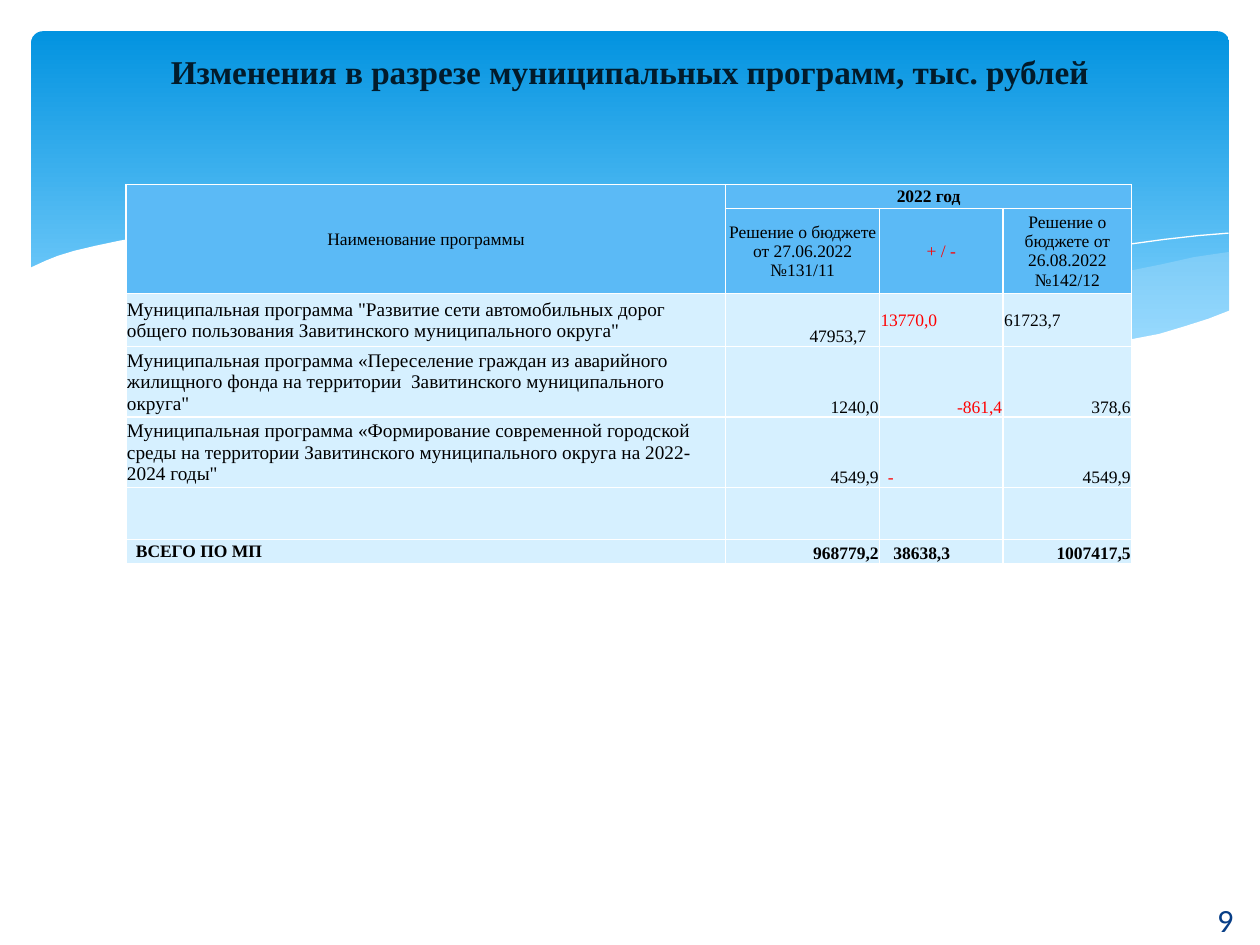
from lxml.etree import SubElement
from pptx import Presentation
from pptx.dml.color import RGBColor
from pptx.enum.shapes import MSO_SHAPE as Preset
from pptx.enum.text import MSO_ANCHOR as Anchor, PP_ALIGN as Align
from pptx.oxml.ns import qn
from pptx.util import Cm, Pt

SERIF = "Times New Roman"
WHITE, BLACK, RED = "FFFFFF", "000000", "FF0000"
HEAD_FILL, BODY_FILL, WAVE_FILL = "5BBAF6", "D6F0FF", "C6E7FC"
WAVE_UNIT = Cm(0.0254)  # wave points are in hundredths of an inch

RIGHT_WAVE = [
    (975, 200), (948, 204), (921, 210), (891, 216), (861, 223), (805, 237), (753, 248),
    (706, 257), (661, 265), (691, 269), (719, 271), (745, 275), (769, 277), (803, 278),
    (835, 277), (863, 275), (889, 272), (913, 267), (935, 262), (949, 257), (963, 252),
    (976, 247), (976, 200)]
MIDDLE_WAVE = [
    (893, 273), (866, 269), (837, 265), (807, 260), (775, 254), (741, 247), (706, 240),
    (668, 231), (629, 222), (598, 214), (569, 208), (541, 203), (514, 198), (489, 194),
    (465, 191), (442, 189), (420, 187), (399, 186), (361, 185), (328, 187), (299, 189),
    (286, 191), (323, 196), (362, 203), (404, 211), (449, 222), (491, 232), (530, 240),
    (566, 248), (601, 255), (634, 261), (665, 266), (695, 270), (722, 274), (748, 276),
    (773, 277), (807, 278), (838, 278), (867, 276), (893, 273)]
LONG_CREST = [
    (309, 195), (328, 192), (353, 189), (387, 187), (433, 187), (469, 189), (510, 192),
    (556, 197), (608, 204), (665, 213), (727, 226), (795, 241), (831, 251), (869, 261),
    (907, 272)]
RIGHT_CREST = [
    (613, 257), (653, 246), (695, 235), (748, 223), (806, 210), (866, 199), (895, 194),
    (924, 190), (951, 187), (975, 185)]
WHITE_WAVE = [
    (977, 246), (959, 253), (940, 259), (920, 265), (899, 269), (875, 273), (850, 275),
    (823, 277), (793, 276), (761, 275), (726, 272), (688, 268), (648, 262), (603, 254),
    (555, 245), (503, 233), (447, 220), (418, 213), (391, 207), (365, 202), (340, 197),
    (316, 194), (292, 190), (271, 188), (250, 186), (230, 185), (211, 184), (177, 184),
    (146, 185), (119, 187), (95, 191), (76, 195), (59, 199), (46, 203), (36, 207),
    (23, 213), (23, 329), (977, 329)]


def color(hex_code):
    return RGBColor.from_string(hex_code)


def add_banner(slide):
    banner = slide.shapes.add_shape(Preset.ROUNDED_RECTANGLE, Cm(0.63), Cm(0.63),
                                    Cm(24.15), Cm(6.86))
    banner.adjustments[0] = 0.034
    banner.shadow.inherit = False
    banner.line.fill.background()
    banner.fill.gradient()
    banner.fill.gradient_angle = 270
    for stop, position, shade in zip(banner.fill.gradient_stops, (0, 0.9),
                                     ("0293E0", "83D3FE")):
        stop.position = position
        stop.color.rgb = color(shade)


def draw_path(slide, points, closed):
    builder = slide.shapes.build_freeform(*points[0], scale=WAVE_UNIT)
    builder.add_line_segments(points[1:], close=closed)
    outline = builder.convert_to_shape()
    outline.shadow.inherit = False
    return outline


def add_wave(slide, points, shade, opacity=100):
    wave = draw_path(slide, points, True)
    wave.line.fill.background()
    wave.fill.solid()
    wave.fill.fore_color.rgb = color(shade)
    if opacity < 100:
        shade_node = wave._element.spPr.find(qn("a:solidFill"))[0]
        SubElement(shade_node, qn("a:alpha"), val=str(opacity * 1000))


def add_crest(slide, points):
    crest = draw_path(slide, points, False)
    crest.fill.background()
    crest.line.color.rgb = color(WHITE)
    crest.line.width = Pt(0)


def write(frame, text, size, shade=BLACK, font=SERIF, bold=False, align=Align.CENTER):
    paragraph = frame.paragraphs[0]
    paragraph.alignment = align
    run = paragraph.add_run()
    run.text = text
    run.font.name = font
    run.font.size = Pt(size)
    run.font.bold = bold
    run.font.color.rgb = color(shade)


def add_label(slide, left, top, width, height, anchor, text, size, **style):
    label = slide.shapes.add_textbox(Cm(left), Cm(top), Cm(width), Cm(height))
    label.text_frame.word_wrap = True
    label.text_frame.vertical_anchor = anchor
    write(label.text_frame, text, size, **style)


def style_cell(cell, shade):
    cell.margin_left = cell.margin_right = cell.margin_top = Cm(0.02)
    cell.margin_bottom = 0
    properties = cell._tc.get_or_add_tcPr()
    for side in ("lnL", "lnR", "lnT", "lnB"):
        border = SubElement(properties, qn(f"a:{side}"), w=str(Pt(1)))
        paint = SubElement(border, qn("a:solidFill"))
        SubElement(paint, qn("a:srgbClr"), val=WHITE)
    cell.fill.solid()
    cell.fill.fore_color.rgb = color(shade)


def fill_cell(cell, text, size=10, anchor=Anchor.MIDDLE, indent=0.02, **style):
    cell.vertical_anchor = anchor
    if style.get("align") == Align.RIGHT:
        cell.margin_right = Cm(indent)
    else:
        cell.margin_left = Cm(indent)
    write(cell.text_frame, text, size, **style)


def add_budget_table(slide):
    widths = (12.09, 3.1, 2.49, 2.59)
    heights = (0.48, 1.6, 1.07, 1.32, 1.32, 1.05, 0.48)
    budget = slide.shapes.add_table(len(heights), len(widths), Cm(2.54), Cm(3.72),
                                    Cm(sum(widths)), Cm(sum(heights))).table
    budget.first_row = budget.horz_banding = False
    for column, width in zip(budget.columns, widths):
        column.width = Cm(width)
    for index, (row, height) in enumerate(zip(budget.rows, heights)):
        row.height = Cm(height)
        for cell in row.cells:
            style_cell(cell, HEAD_FILL if index < 2 else BODY_FILL)

    # Header
    budget.cell(0, 0).merge(budget.cell(1, 0))
    budget.cell(0, 1).merge(budget.cell(0, 3))
    fill_cell(budget.cell(0, 0), "Наименование программы")
    fill_cell(budget.cell(0, 1), "2022 год", bold=True)
    fill_cell(budget.cell(1, 1), "Решение о бюджете от 27.06.2022 №131/11")
    fill_cell(budget.cell(1, 2), "+ / -", shade=RED)
    fill_cell(budget.cell(1, 3), "Решение о бюджете от 26.08.2022 №142/12")

    # Programmes
    programmes = {
        2: 'Муниципальная программа "Развитие сети автомобильных дорог общего '
           'пользования Завитинского муниципального округа"',
        3: "Муниципальная программа «Переселение граждан из аварийного жилищного "
           'фонда на территории  Завитинского муниципального округа"',
        4: "Муниципальная программа «Формирование современной городской среды на "
           'территории Завитинского муниципального округа на 2022-2024 годы"',
    }
    for row, programme in programmes.items():
        fill_cell(budget.cell(row, 0), programme, 11, align=Align.LEFT)
    fill_cell(budget.cell(6, 0), "ВСЕГО ПО МП", indent=0.2, bold=True, align=Align.LEFT)

    # Amounts: row, column, text, alignment, anchor, indent
    left, right, middle, bottom = Align.LEFT, Align.RIGHT, Anchor.MIDDLE, Anchor.BOTTOM
    amounts = [
        (2, 1, "47953,7", right, bottom, 0.27),
        (2, 2, "13770,0", left, middle, 0.02),
        (2, 3, "61723,7", left, middle, 0.02),
        (3, 1, "1240,0", right, bottom, 0.02),
        (3, 2, "-861,4", right, bottom, 0.02),
        (3, 3, "378,6", right, bottom, 0.02),
        (4, 1, "4549,9", right, bottom, 0.02),
        (4, 2, "-", left, bottom, 0.17),
        (4, 3, "4549,9", right, bottom, 0.02),
        (6, 1, "968779,2", right, bottom, 0.02),
        (6, 2, "38638,3", left, bottom, 0.28),
        (6, 3, "1007417,5", right, bottom, 0.02),
    ]
    for row, column, amount, align, anchor, indent in amounts:
        is_total = row == 6
        fill_cell(budget.cell(row, column), amount, anchor=anchor, indent=indent,
                  align=align, bold=is_total,
                  shade=RED if column == 2 and not is_total else BLACK)


def main():
    deck = Presentation()
    deck.slide_width, deck.slide_height = Cm(25.4), Cm(19.05)
    slide = deck.slides.add_slide(deck.slide_layouts[6])

    # Background banner and waves
    add_banner(slide)
    add_wave(slide, RIGHT_WAVE, WAVE_FILL, 29)
    add_wave(slide, MIDDLE_WAVE, WAVE_FILL, 40)
    add_crest(slide, LONG_CREST)
    add_crest(slide, RIGHT_CREST)
    add_wave(slide, WHITE_WAVE, WHITE)

    # Title, page number and table
    add_label(slide, 0, 0.91, 25.4, 1.6, Anchor.TOP,
              "Изменения в разрезе муниципальных программ, тыс. рублей", 19,
              shade="021B2B", bold=True)
    add_label(slide, 23.9, 18.03, 1.6, 1.02, Anchor.MIDDLE, "9", 18.5,
              shade="073E87", font="Calibri")
    add_budget_table(slide)

    deck.save("out.pptx")


if __name__ == "__main__":
    main()
